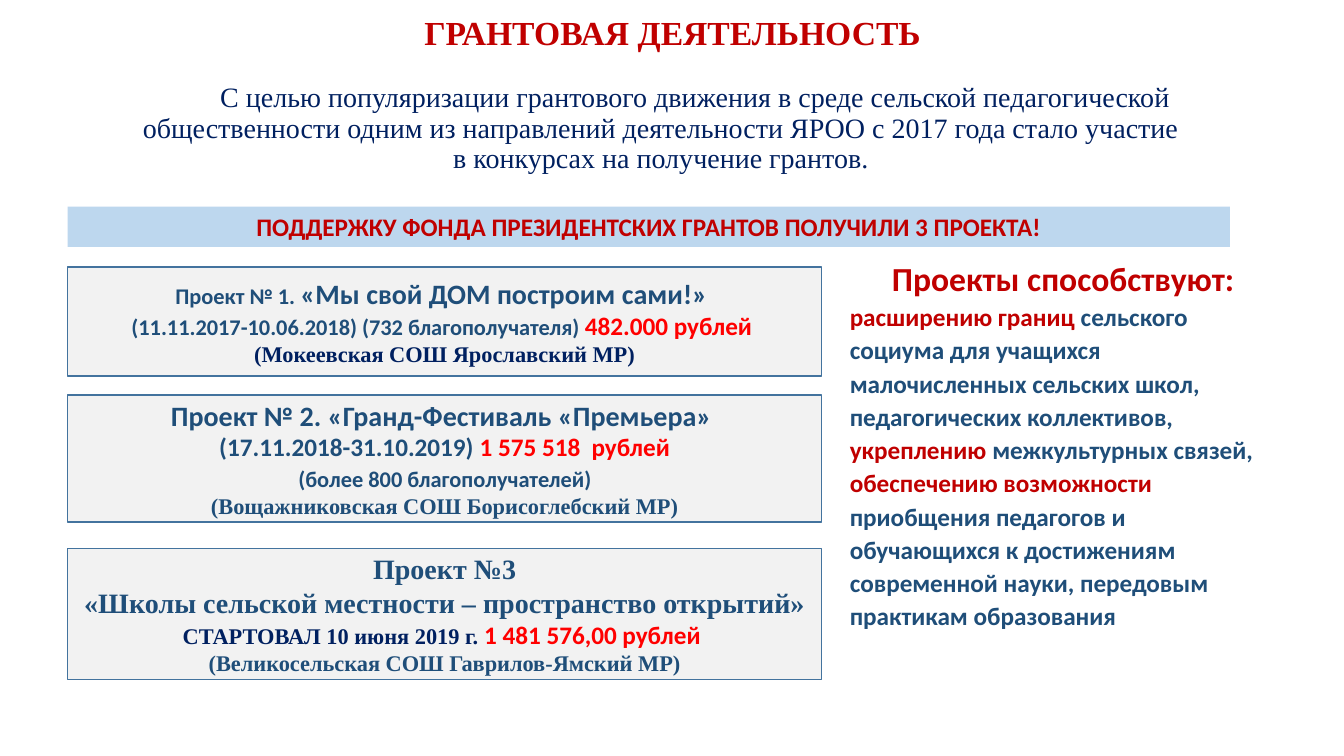
from pptx import Presentation
from pptx.dml.color import RGBColor
from pptx.enum.shapes import MSO_SHAPE
from pptx.enum.text import MSO_ANCHOR, MSO_AUTO_SIZE, PP_ALIGN
from pptx.oxml.ns import qn
from pptx.util import Inches, Pt

RECT = MSO_SHAPE.RECTANGLE
TOP, MIDDLE = MSO_ANCHOR.TOP, MSO_ANCHOR.MIDDLE
LEFT, CENTER = PP_ALIGN.LEFT, PP_ALIGN.CENTER
NO_FIT, GROW = MSO_AUTO_SIZE.NONE, MSO_AUTO_SIZE.SHAPE_TO_FIT_TEXT

CRIMSON = RGBColor(0xC0, 0x00, 0x00)
RED = RGBColor(0xFF, 0x00, 0x00)
NAVY = RGBColor(0x00, 0x20, 0x60)
BLUE = RGBColor(0x1F, 0x4E, 0x79)
EDGE = RGBColor(0x43, 0x73, 0x9E)
PALE = RGBColor(0xF2, 0xF2, 0xF2)
SKY = RGBColor(0xBD, 0xD7, 0xEE)

SANS, SERIF = "Calibri", "Times New Roman"


def add_run(para, text, size=18, color=BLUE, font=SANS, bold=True):
    """Append formatted text; a line feed becomes a line break."""
    for i, line in enumerate(text.split("\n")):
        if i:
            para.add_line_break()
        run = para.add_run()
        run.text = line
        run.font.size = Pt(size)
        run.font.name = font
        run.font.bold = bold
        run.font.color.rgb = color


def write(shape, paras, align=CENTER, anchor=MIDDLE, space=1.0, fit=NO_FIT):
    """Fill a shape with paragraphs, each a list of (text, format) runs."""
    frame = shape.text_frame
    frame.word_wrap = True
    frame.auto_size = fit
    frame.vertical_anchor = anchor
    for i, runs in enumerate(paras):
        para = frame.add_paragraph() if i else frame.paragraphs[0]
        para.alignment = align
        para.line_spacing = space
        for text, form in runs:
            add_run(para, text, **form)
    return frame


def place(shape, left, top, width, height):
    shape.left, shape.top = Inches(left), Inches(top)
    shape.width, shape.height = Inches(width), Inches(height)


def add_box(slide, left, top, width, height, fill, line=None):
    box = slide.shapes.add_shape(
        RECT, Inches(left), Inches(top), Inches(width), Inches(height))
    box.shadow.inherit = False
    box.fill.solid()
    box.fill.fore_color.rgb = fill
    if line is None:
        box.line.fill.background()
    else:
        box.line.color.rgb = line
        box.line.width = Pt(1)
    return box


def add_intro(body, text):
    """Centre the intro with an indented first line and no bullet."""
    place(body, 1.28, 0.78, 11.23, 1.31)
    form = dict(size=20, font=SERIF, color=NAVY, bold=False)
    frame = write(body, [[(text, form)]], anchor=TOP, space=0.9)
    frame.margin_right = Inches(0.78)
    para = frame.paragraphs[0]
    para.space_before = Pt(10)
    props = para._p.get_or_add_pPr()
    props.set("marL", "0")
    props.set("indent", str(Inches(0.68)))
    props.append(props.makeelement(qn("a:buNone"), {}))


# Content of the project cards: top, height, paragraphs
small, large = dict(size=16), dict(size=20)
school = dict(size=16, font=SERIF)
navy = dict(school, color=NAVY)
sum_ = dict(color=RED)
CARDS = [
    (2.65, 1.08, [
        [("Проект № 1. ", small), ("«Мы свой ДОМ построим сами!» ", large)],
        [("(11.11.2017-10.06.2018) (732 благополучателя) ", small),
         ("482.000 рублей ", sum_)],
        [("(Мокеевская СОШ Ярославский МР)", navy)],
    ]),
    (3.92, 1.26, [
        [("Проект № 2. «Гранд-Фестиваль «Премьера» ", large)],
        [("(17.11.2018-31.10.2019) ", {}), ("1 575 518  рублей", sum_)],
        [(" ", sum_), ("(более 800 благополучателей) ", small)],
        [("(Вощажниковская СОШ Борисоглебский МР)", school)],
    ]),
    (5.44, 1.3, [
        [("Проект №3\n«Школы сельской местности – пространство открытий»\n",
          dict(size=20, font=SERIF)),
         ("СТАРТОВАЛ 10 июня 2019 г. ", navy),
         ("1 481 576,00 рублей ", sum_)],
        [("(Великосельская СОШ Гаврилов-Ямский МР)", school)],
    ]),
]

# Content of the right column
key = dict(color=CRIMSON)
GOALS = [
    [("Проекты способствуют:", dict(size=24, color=CRIMSON))],
    [("расширению границ ", key),
     ("сельского социума для учащихся малочисленных сельских школ, "
      "педагогических коллективов,", {})],
    [("укреплению ", key), ("межкультурных связей,", {})],
    [("обеспечению возможности ", key),
     ("приобщения педагогов и обучающихся к достижениям современной науки, "
      "передовым практикам образования", {})],
]


def main():
    deck = Presentation()
    deck.slide_width, deck.slide_height = Inches(13.33), Inches(7.5)
    slide = deck.slides.add_slide(deck.slide_layouts[1])

    # Title and intro
    title = slide.shapes.title
    place(title, 1.42, 0.1, 10.5, 0.49)
    write(title, [[("ГРАНТОВАЯ ДЕЯТЕЛЬНОСТЬ",
                    dict(size=24, font=SERIF, color=CRIMSON))]], space=0.9)
    add_intro(slide.placeholders[1],
              "С целью популяризации грантового движения в среде сельской "
              "педагогической общественности одним из направлений "
              "деятельности ЯРОО с 2017 года стало участие\n"
              "в конкурсах на получение грантов.")

    # Project cards
    for top, height, paras in CARDS:
        write(add_box(slide, 0.67, top, 7.48, height, PALE, EDGE), paras)

    # Goals
    goals = slide.shapes.add_textbox(
        Inches(8.33), Inches(2.47), Inches(4.43), Inches(3.88))
    frame = write(goals, GOALS, align=LEFT, anchor=TOP, space=1.1, fit=GROW)
    frame.paragraphs[0].alignment = CENTER

    # Banner
    banner = add_box(slide, 0.67, 2.05, 11.53, 0.4, SKY)
    write(banner, [[("ПОДДЕРЖКУ ФОНДА ПРЕЗИДЕНТСКИХ ГРАНТОВ ПОЛУЧИЛИ "
                     "3 ПРОЕКТА!", key)]], anchor=TOP, fit=GROW)

    deck.save("out.pptx")


if __name__ == "__main__":
    main()
